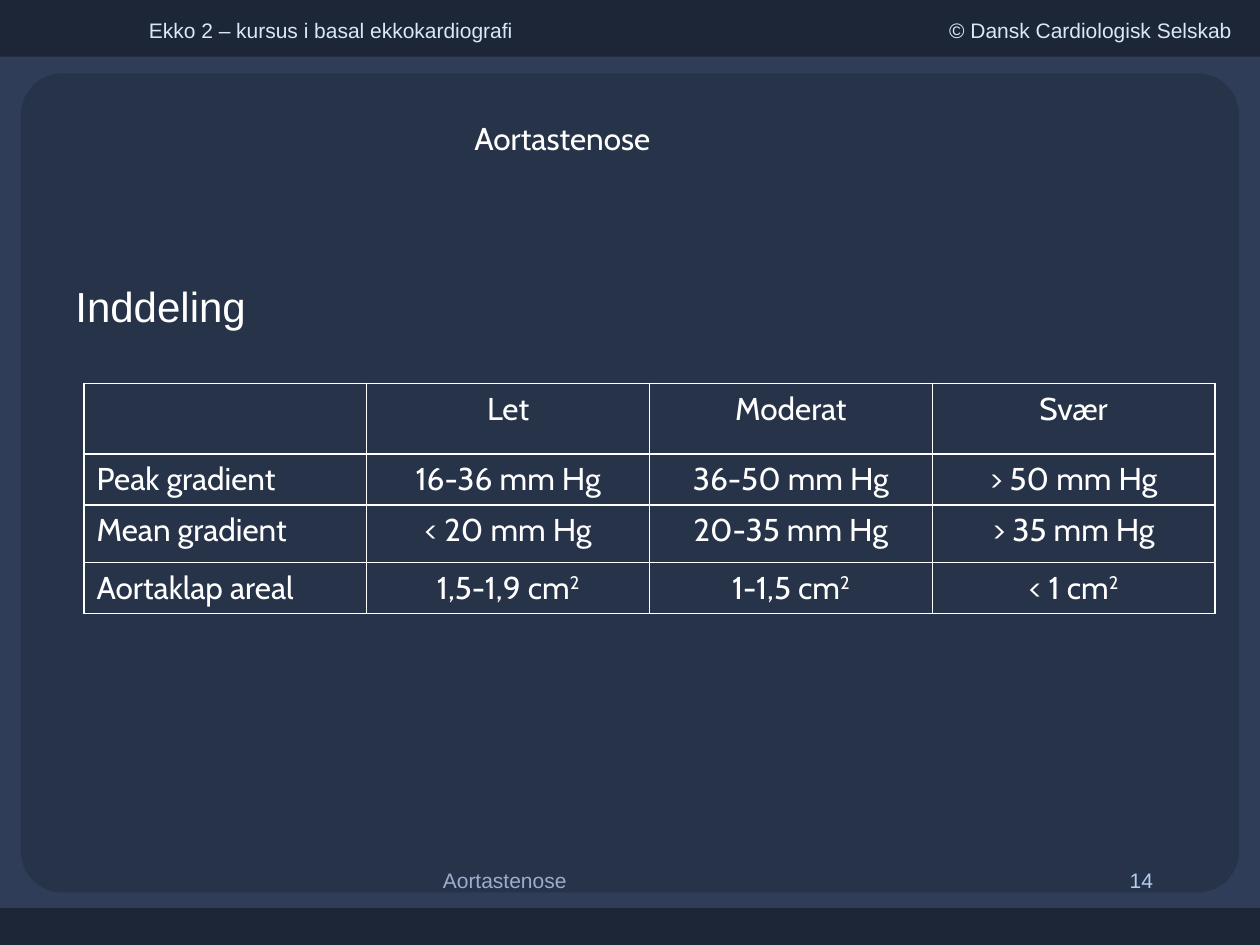
from pptx import Presentation
from pptx.dml.color import RGBColor
from pptx.enum.shapes import MSO_SHAPE
from pptx.enum.text import MSO_ANCHOR, PP_ALIGN
from pptx.oxml import parse_xml
from pptx.oxml.ns import nsdecls
from pptx.util import Pt

COLORS = {
    "background": "2F3D58",
    "band": "1D2637",
    "panel": "273349",
    "header": "D8E8FA",
    "text": "FFFFFF",
    "number": "AFD0F5",
    "footer": "9DADCB",
}
WIDTH, HEIGHT = 720, 540
GRADING = [
    ["", "Let", "Moderat", "Svær"],
    ["Peak gradient", "16-36 mm Hg", "36-50 mm Hg", "> 50 mm Hg"],
    ["Mean gradient", "< 20 mm Hg", "20-35 mm Hg", "> 35 mm Hg"],
    ["Aortaklap areal", "1,5-1,9 cm^2", "1-1,5 cm^2", "< 1 cm^2"],
]
ROW_HEIGHTS = [40.5, 29, 33, 29]


def rgb(name):
    return RGBColor.from_string(COLORS[name])


def write_text(frame, text, size=12, font="Arial", color="text",
               align=PP_ALIGN.LEFT, indent=0):
    """Fill the first paragraph; whatever follows a ^ is superscript."""
    paragraph = frame.paragraphs[0]
    paragraph.alignment = align
    if indent:
        paragraph._p.get_or_add_pPr().set("marL", str(Pt(indent)))
    paragraph.font.size = Pt(size)
    for position, part in enumerate(text.split("^")):
        if not part:
            continue
        run = paragraph.add_run()
        run.text = part
        run.font.size = Pt(size)
        run.font.name = font
        run.font.color.rgb = rgb(color)
        if position:
            run.font._element.set("baseline", "30000")


class SlideBuilder:
    """Holds the current slide and the style of its table."""

    border_width = 1
    border_color = "text"

    def __init__(self, slide):
        self.slide = slide
        fill = slide.background.fill
        fill.solid()
        fill.fore_color.rgb = rgb("background")

    def block(self, left, top, width, height, color, kind=MSO_SHAPE.RECTANGLE):
        shape = self.slide.shapes.add_shape(
            kind, Pt(left), Pt(top), Pt(width), Pt(height))
        shape.shadow.inherit = False
        shape.fill.solid()
        shape.fill.fore_color.rgb = rgb(color)
        shape.line.fill.background()
        return shape

    def text(self, left, top, width, height, text, wrap=True,
             anchor=MSO_ANCHOR.TOP, **text_format):
        box = self.slide.shapes.add_textbox(
            Pt(left), Pt(top), Pt(width), Pt(height))
        box.text_frame.word_wrap = wrap
        box.text_frame.vertical_anchor = anchor
        write_text(box.text_frame, text, **text_format)

    def border(self, cell):
        properties = cell._tc.get_or_add_tcPr()
        for index, side in enumerate(("lnL", "lnR", "lnT", "lnB")):
            properties.insert(index, parse_xml(
                f'<a:{side} {nsdecls("a")} w="{Pt(self.border_width)}">'
                f'<a:solidFill><a:srgbClr val="{COLORS[self.border_color]}"/>'
                f'</a:solidFill></a:{side}>'))

    def table(self, left, top, width, rows, heights, **text_format):
        columns = len(rows[0])
        table = self.slide.shapes.add_table(
            len(rows), columns, Pt(left), Pt(top), Pt(width),
            Pt(sum(heights))).table
        table.first_row = False
        table.horz_banding = False
        for column in table.columns:
            column.width = Pt(width / columns)
        for row, height, texts in zip(table.rows, heights, rows):
            row.height = Pt(height)
            for index, (cell, text) in enumerate(zip(row.cells, texts)):
                cell.fill.background()
                self.border(cell)
                align = PP_ALIGN.CENTER if index else PP_ALIGN.LEFT
                write_text(cell.text_frame, text, align=align, **text_format)


def main():
    presentation = Presentation()
    presentation.slide_width = Pt(WIDTH)
    presentation.slide_height = Pt(HEIGHT)
    builder = SlideBuilder(
        presentation.slides.add_slide(presentation.slide_layouts[6]))

    builder.block(0, 519, WIDTH, 21, "band")
    builder.block(0, 0, WIDTH, 32.4, "band")
    panel = builder.block(12, 42, 696, 468, "panel",
                          MSO_SHAPE.ROUNDED_RECTANGLE)
    panel.adjustments[0] = 0.05

    builder.text(78, 6.5, 270, 21.6, "Ekko 2 – kursus i basal ekkokardiografi",
                 color="header")
    builder.text(496, 6.5, 215, 21.6, "© Dansk Cardiologisk Selskab",
                 color="header", align=PP_ALIGN.RIGHT)
    builder.text(48, 55, 612, 48, "Aortastenose", anchor=MSO_ANCHOR.MIDDLE,
                 size=18, font="Cabin", indent=216)
    builder.text(36, 156.5, 112, 36, "Inddeling", wrap=False, size=24)
    builder.table(48, 219, 646.4, GRADING, ROW_HEIGHTS, size=18, font="Cabin")
    builder.text(516, 492, 150, 36, "14", color="number",
                 align=PP_ALIGN.RIGHT)
    builder.text(246, 492, 228, 36, "Aortastenose", color="footer")

    presentation.save("out.pptx")


if __name__ == "__main__":
    main()
